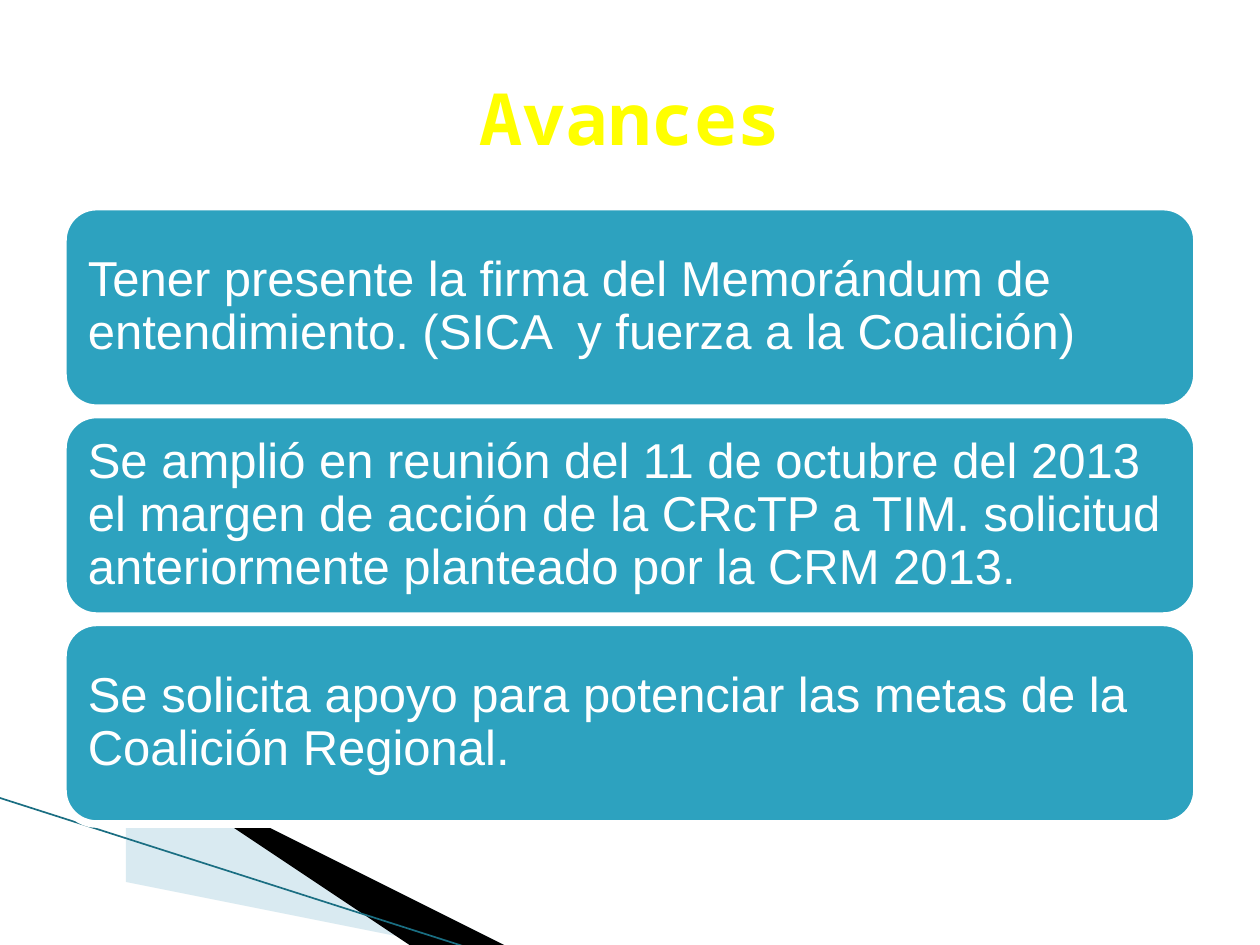
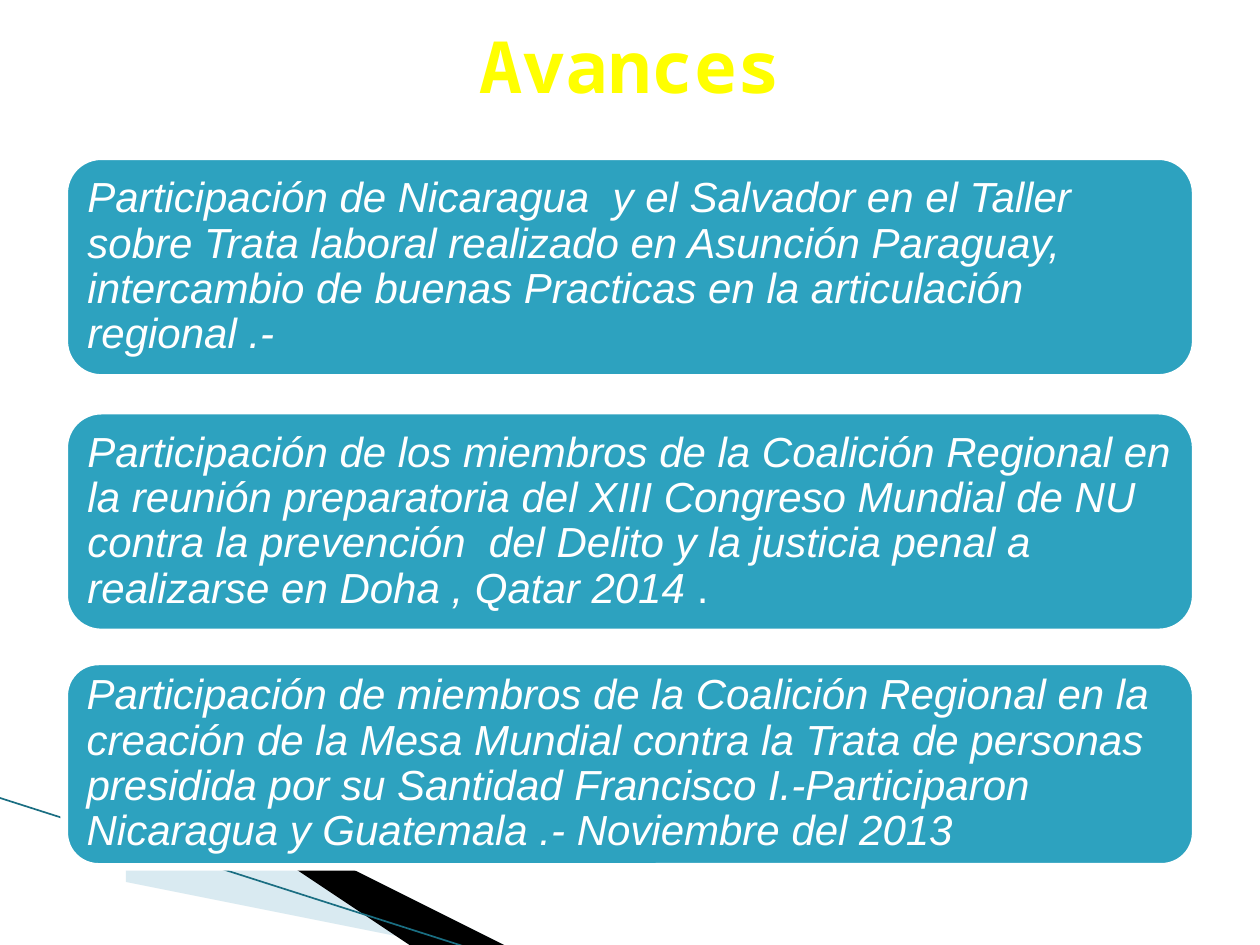
import dataclasses

import lxml.etree
import pptx
import pptx.dml.color
import pptx.enum.shapes
import pptx.enum.text
import pptx.oxml.ns
import pptx.util

Inches = pptx.util.Inches
Pt = pptx.util.Pt
qn = pptx.oxml.ns.qn


@dataclasses.dataclass(frozen=True)
class Theme:
    """Colours, fonts and sizes shared by the slides."""
    card: str = "2DA2BF"
    paper: str = "FFFFFF"
    title: str = "FFFF00"
    pale_wedge: str = "A0CBDC"
    dark_wedge: str = "000000"
    edge: str = "1A6E82"
    title_font: str = "Noto Sans Mono"
    body_font: str = "Arial"
    title_size: float = 41
    card_line: float = 4.33
    edge_line: float = 0.95
    line_spacing: float = 0.9


THEME = Theme()
SLIDE_WIDTH, SLIDE_HEIGHT = 10, 7.5


def rgb(code):
    """Return the colour for a hex code."""
    return pptx.dml.color.RGBColor.from_string(code)


def style_font(font, name, size, color, bold=False, italic=False):
    """Set every shared property of a font."""
    font.name, font.size = name, Pt(size)
    font.bold, font.italic = bold, italic
    font.color.rgb = rgb(color)


def add_wedge(slide, points, color, alpha=None):
    """Draw a filled outline through points given in inches."""
    builder = slide.shapes.build_freeform(*points[0], scale=Inches(1))
    builder.add_line_segments(points[1:], close=True)
    wedge = builder.convert_to_shape()
    wedge.shadow.inherit = False
    wedge.line.fill.background()
    wedge.fill.solid()
    wedge.fill.fore_color.rgb = rgb(color)
    if alpha is not None:
        fill_color = wedge.fill._xPr.find(qn("a:solidFill"))[0]
        lxml.etree.SubElement(fill_color, qn("a:alpha")).set("val", str(alpha * 1000))


def add_corner(slide):
    """Draw the wedges and the edge line in the lower left corner."""
    add_wedge(slide, [(0.55, 6.51), (5.95, 7.51), (4.56, 7.51), (0.55, 6.5)],
              THEME.pale_wedge, alpha=40)
    add_wedge(slide, [(0.53, 6.49), (4.57, 7.51), (3.72, 7.52), (0.54, 6.5)],
              THEME.dark_wedge)
    edge = slide.shapes.add_connector(
        pptx.enum.shapes.MSO_CONNECTOR.STRAIGHT,
        Inches(-0.01), Inches(6.33), Inches(3.71), Inches(7.52))
    edge.line.color.rgb = rgb(THEME.edge)
    edge.line.width = Pt(THEME.edge_line)
    lxml.etree.SubElement(edge._element.spPr, qn("a:effectLst"))


def add_title(slide, text, top):
    """Write the centred slide title."""
    title = slide.shapes.add_textbox(Inches(0.5), Inches(top), Inches(9), Inches(1.25))
    frame = title.text_frame
    frame.word_wrap = True
    frame.vertical_anchor = pptx.enum.text.MSO_ANCHOR.MIDDLE
    frame.text = text
    heading = frame.paragraphs[0]
    heading.alignment = pptx.enum.text.PP_ALIGN.CENTER
    style_font(heading.runs[0].font, THEME.title_font, THEME.title_size,
               THEME.title, bold=True)


def add_card(slide, box, text, size, inset, italic=False, upright_end=""):
    """Draw one rounded card, with an optional upright ending to its text."""
    card = slide.shapes.add_shape(
        pptx.enum.shapes.MSO_SHAPE.ROUNDED_RECTANGLE, *map(Inches, box))
    card.shadow.inherit = False
    card.fill.solid()
    card.fill.fore_color.rgb = rgb(THEME.card)
    card.line.color.rgb = rgb(THEME.paper)
    card.line.width = Pt(THEME.card_line)
    frame = card.text_frame
    frame.word_wrap = True
    frame.vertical_anchor = pptx.enum.text.MSO_ANCHOR.MIDDLE
    frame.margin_left = frame.margin_right = Inches(inset)
    frame.margin_top = frame.margin_bottom = Inches(inset)
    frame.text = text
    statement = frame.paragraphs[0]
    statement.alignment = pptx.enum.text.PP_ALIGN.LEFT
    statement.line_spacing = THEME.line_spacing
    style_font(statement.runs[0].font, THEME.body_font, size, THEME.paper, italic=italic)
    if upright_end:
        ending = statement.add_run()
        ending.text = upright_end
        style_font(ending.font, THEME.body_font, size, THEME.paper)


def add_progress_slide(deck, title_top, left, rows, advances, **card_style):
    """Build a slide whose centred cards fill rows of (top, height)."""
    slide = deck.slides.add_slide(deck.slide_layouts[6])
    slide.background.fill.solid()
    slide.background.fill.fore_color.rgb = rgb(THEME.paper)
    add_corner(slide)
    for (top, height), (text, upright_end) in zip(rows, advances):
        add_card(slide, (left, top, SLIDE_WIDTH - 2 * left, height), text,
                 upright_end=upright_end, **card_style)
    add_title(slide, "Avances", title_top)


AGREEMENTS = [
    ("Tener presente la firma del Memorándum de entendimiento. "
     "(SICA  y fuerza a la Coalición)", ""),
    ("Se amplió en reunión del 11 de octubre del 2013 el margen de acción de la "
     "CRcTP a TIM. solicitud anteriormente planteado por la CRM 2013.", ""),
    ("Se solicita apoyo para potenciar las metas de la Coalición Regional.", ""),
]

PARTICIPATIONS = [
    ("Participación de Nicaragua  y el Salvador en el Taller sobre Trata laboral "
     "realizado en Asunción Paraguay, intercambio de buenas Practicas en la "
     "articulación regional .-", ""),
    ("Participación de los miembros de la Coalición Regional en la reunión "
     "preparatoria del XIII Congreso Mundial de NU contra la prevención  del Delito "
     "y la justicia penal a realizarse en Doha , Qatar 2014 ", "."),
    ("Participación de miembros de la Coalición Regional en la creación de la Mesa "
     "Mundial contra la Trata de personas presidida por su Santidad Francisco "
     "I.-Participaron Nicaragua y Guatemala .- Noviembre del 2013", ""),
]


def main():
    """Build and save the two slides."""
    deck = pptx.Presentation()
    deck.slide_width, deck.slide_height = Inches(SLIDE_WIDTH), Inches(SLIDE_HEIGHT)
    card_height, gap = 1.6, 0.05
    even_rows = [(1.64 + i * (card_height + gap), card_height)
                 for i in range(len(AGREEMENTS))]
    add_progress_slide(deck, 0.3, 0.5, even_rows, AGREEMENTS, size=28, inset=0.12)
    add_progress_slide(deck, -0.11, 0.51, [(1.24, 1.76), (3.26, 1.76), (5.25, 1.63)],
                       PARTICIPATIONS, size=24, inset=0.1, italic=True)
    deck.save("out.pptx")


if __name__ == "__main__":
    main()
